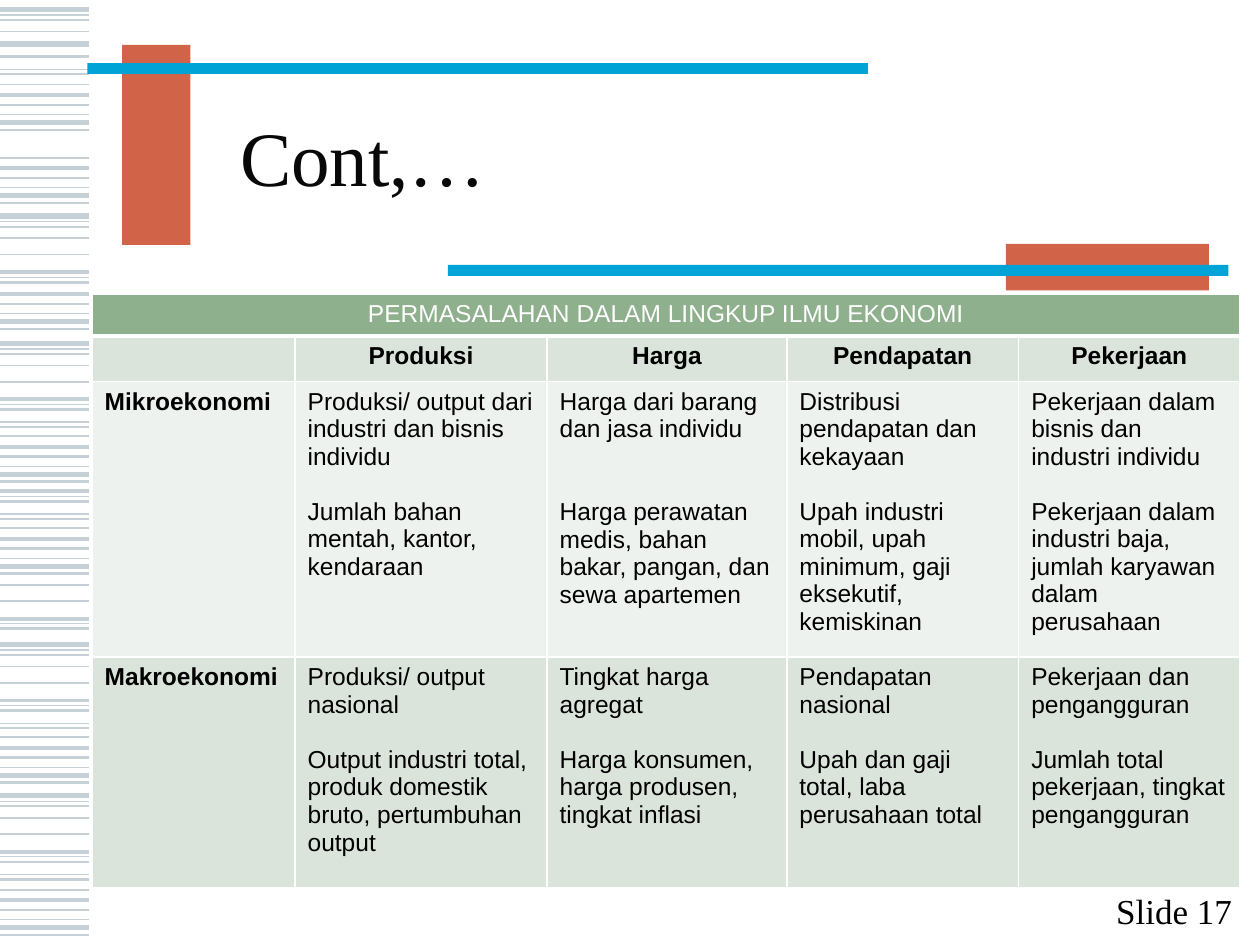
"""Build the slide on the scope of economics with its striped frame and problem table."""
from dataclasses import dataclass
from typing import Any

import lxml.etree
import pptx
import pptx.dml.color
import pptx.enum.shapes
import pptx.enum.text
import pptx.oxml.ns
import pptx.util

Pt = pptx.util.Pt
ALIGN = pptx.enum.text.PP_ALIGN
ANCHOR = pptx.enum.text.MSO_ANCHOR

COLORS = {
    "stripe": "C5D1D7", "block": "D16349", "bar": "00A3D6", "title": "080808",
    "text": "000000", "white": "FFFFFF", "heading": "8FB08C",
    "band_dark": "DBE4DA", "band_light": "EEF2EE",
}


@dataclass(frozen=True)
class Box:
    left: float
    top: float
    width: float
    height: float

    def lengths(self) -> tuple[Any, ...]:
        return tuple(map(Pt, (self.left, self.top, self.width, self.height)))


@dataclass(frozen=True)
class Bar:
    box: Box
    color: str


@dataclass(frozen=True)
class StripeBand:
    base: float
    motif: tuple[tuple[float, float], ...]


@dataclass(frozen=True)
class Row:
    height: float
    fill: str
    cells: tuple[tuple[str, ...], ...]


STRIPE_LENGTH = 51.1
NARROW = ((-17.2, 1), (-11.2, 2.25), (-5.5, 1.5), (0, 0.75), (4.6, 3), (8.8, 1.5))
WIDE = ((-3.2, 3), (0, 0.75), (2.9, 1), (9.4, 1), (18.7, 1),
        (28.8, 2.25), (31.7, 0.75), (34.6, 1.5), (41.8, 0.75), (44.6, 1.5))
STRIPE_BANDS = (
    *(StripeBand(base, NARROW) for base in (65.5, 107.3, 266.4, 319, 438.5, 525.6)),
    *(StripeBand(base, WIDE) for base in (199.4, 371.5, 457.9)),
    StripeBand(179.3, NARROW[1:]),
    StripeBand(8.6, WIDE[:4]),
    StripeBand(28.4, WIDE[:1]),
    StripeBand(-2.2, WIDE[7:]),
    StripeBand(126.7, WIDE[:8]),
    StripeBand(252, WIDE[5:]),
    StripeBand(324.7, WIDE[3:8]),
)
BARS = (
    Bar(Box(69.8, 25.7, 39, 114.3), "block"),
    Bar(Box(50, 36, 446, 6.2), "bar"),
    Bar(Box(574.8, 139.4, 116, 26.6), "block"),
    Bar(Box(256, 151.4, 446, 6.2), "bar"),
)

TABLE_BOX = Box(52.6, 168, 656, 331)
COLUMN_WIDTHS = (116, 144, 137, 132.5, 126.5)
TEXT_LINE = 15.8
ROWS = (
    Row(23, "heading", (("PERMASALAHAN DALAM LINGKUP ILMU EKONOMI",), (), (), (), ())),
    Row(26, "band_dark", ((), ("Produksi",), ("Harga",), ("Pendapatan",), ("Pekerjaan",))),
    Row(150, "band_light", (
        ("Mikroekonomi",),
        ("Produksi/ output dari industri dan bisnis individu",
         "Jumlah bahan mentah, kantor, kendaraan"),
        ("Harga dari barang dan jasa individu",
         "Harga perawatan medis, bahan bakar, pangan, dan sewa apartemen"),
        ("Distribusi pendapatan dan kekayaan",
         "Upah industri mobil, upah minimum, gaji eksekutif, kemiskinan"),
        ("Pekerjaan dalam bisnis dan industri individu",
         "Pekerjaan dalam industri baja, jumlah karyawan dalam perusahaan"),
    )),
    Row(132, "band_dark", (
        ("Makroekonomi",),
        ("Produksi/ output nasional",
         "Output industri total, produk domestik bruto, pertumbuhan output"),
        ("Tingkat harga agregat", "Harga konsumen, harga produsen, tingkat inflasi"),
        ("Pendapatan nasional", "Upah dan gaji total, laba perusahaan total"),
        ("Pekerjaan dan pengangguran", "Jumlah total pekerjaan, tingkat pengangguran"),
    )),
)


def rgb(color: str) -> pptx.dml.color.RGBColor:
    return pptx.dml.color.RGBColor.from_string(COLORS[color])


def apply(target: Any, formats: dict[str, Any]) -> None:
    for name, value in formats.items():
        setattr(target, name, value)


def write(paragraph: Any, text: str, color: str, formats: dict[str, Any]) -> None:
    run = paragraph.add_run()
    run.text = text
    apply(run.font, formats)
    run.font.color.rgb = rgb(color)


def draw_stripes(slide: Any, band: StripeBand) -> None:
    for offset, weight in band.motif:
        top = Pt(band.base + offset)
        stripe = slide.shapes.add_connector(
            pptx.enum.shapes.MSO_CONNECTOR.STRAIGHT, 0, top, Pt(STRIPE_LENGTH), top)
        stripe.line.color.rgb = rgb("stripe")
        stripe.line.width = Pt(weight)
        lxml.etree.SubElement(stripe._element.spPr, pptx.oxml.ns.qn("a:effectLst"))


def draw_bar(slide: Any, bar: Bar) -> None:
    shape = slide.shapes.add_shape(
        pptx.enum.shapes.MSO_SHAPE.RECTANGLE, *bar.box.lengths())
    shape.shadow.inherit = False
    shape.fill.solid()
    shape.fill.fore_color.rgb = rgb(bar.color)
    shape.line.fill.background()


def fill_title(title: Any) -> None:
    apply(title, dict(zip(("left", "top", "width", "height"),
                          Box(108, 48.2, 581, 90).lengths())))
    apply(title.text_frame, {
        "margin_left": Pt(29.2), "vertical_anchor": ANCHOR.MIDDLE, "word_wrap": True,
        "auto_size": pptx.enum.text.MSO_AUTO_SIZE.NONE})
    paragraph = title.text_frame.paragraphs[0]
    apply(paragraph, {"alignment": ALIGN.LEFT, "line_spacing": 0.85})
    write(paragraph, "Cont,…", "title", {"name": "Times New Roman", "size": Pt(44)})


def draw_slide_number(slide: Any) -> None:
    frame = slide.shapes.add_textbox(*Box(627.8, 507, 86.4, 28.8).lengths()).text_frame
    apply(frame, {"word_wrap": False, "vertical_anchor": ANCHOR.BOTTOM})
    paragraph = frame.paragraphs[0]
    paragraph.alignment = ALIGN.CENTER
    write(paragraph, "Slide 17", "text", {"name": "Times New Roman", "size": Pt(20)})


def add_borders(cell: Any, bottom_weight: float) -> None:
    properties = cell._tc.get_or_add_tcPr()
    for side, weight in (("L", 1), ("R", 1), ("T", 1), ("B", bottom_weight)):
        line = lxml.etree.SubElement(
            properties, pptx.oxml.ns.qn(f"a:ln{side}"), w=str(int(Pt(weight))))
        fill = lxml.etree.SubElement(line, pptx.oxml.ns.qn("a:solidFill"))
        lxml.etree.SubElement(fill, pptx.oxml.ns.qn("a:srgbClr"), val=COLORS["white"])


def fill_cell(cell: Any, texts: tuple[str, ...], row: int, column: int) -> None:
    add_borders(cell, 3 if row == 0 else 1)
    cell.fill.solid()
    cell.fill.fore_color.rgb = rgb(ROWS[row].fill)
    frame = cell.text_frame
    if not texts:
        frame.paragraphs[0]._p.get_or_add_endParaRPr().set("sz", "1400")
    for index, text in enumerate(texts):
        paragraph = frame.add_paragraph() if index else frame.paragraphs[0]
        paragraph.alignment = ALIGN.CENTER if row < 2 else ALIGN.LEFT
        if index:
            blank_lines = 2 if (row, column) == (2, 2) else 1
            paragraph.space_before = Pt(TEXT_LINE * blank_lines)
        write(paragraph, text, "white" if row == 0 else "text", {
            "name": "Arial", "size": Pt(14),
            "bold": row == 1 or (row > 1 and column == 0)})


def draw_table(slide: Any) -> None:
    table = slide.shapes.add_table(
        len(ROWS), len(COLUMN_WIDTHS), *TABLE_BOX.lengths()).table
    apply(table, {"first_row": False, "horz_banding": False})
    for column, width in zip(table.columns, COLUMN_WIDTHS):
        column.width = Pt(width)
    for row_index, row in enumerate(ROWS):
        table.rows[row_index].height = Pt(row.height)
        for column_index, texts in enumerate(row.cells):
            fill_cell(table.cell(row_index, column_index), texts, row_index, column_index)
    table.cell(0, 0).merge(table.cell(0, len(COLUMN_WIDTHS) - 1))


def main() -> None:
    presentation = pptx.Presentation()
    apply(presentation, {"slide_width": Pt(720), "slide_height": Pt(540)})
    slide = presentation.slides.add_slide(presentation.slide_layouts.get_by_name("Title Only"))
    for band in STRIPE_BANDS:
        draw_stripes(slide, band)
    for bar in BARS:
        draw_bar(slide, bar)
    fill_title(slide.shapes.title)
    draw_slide_number(slide)
    draw_table(slide)
    presentation.save("out.pptx")


if __name__ == "__main__":
    main()
